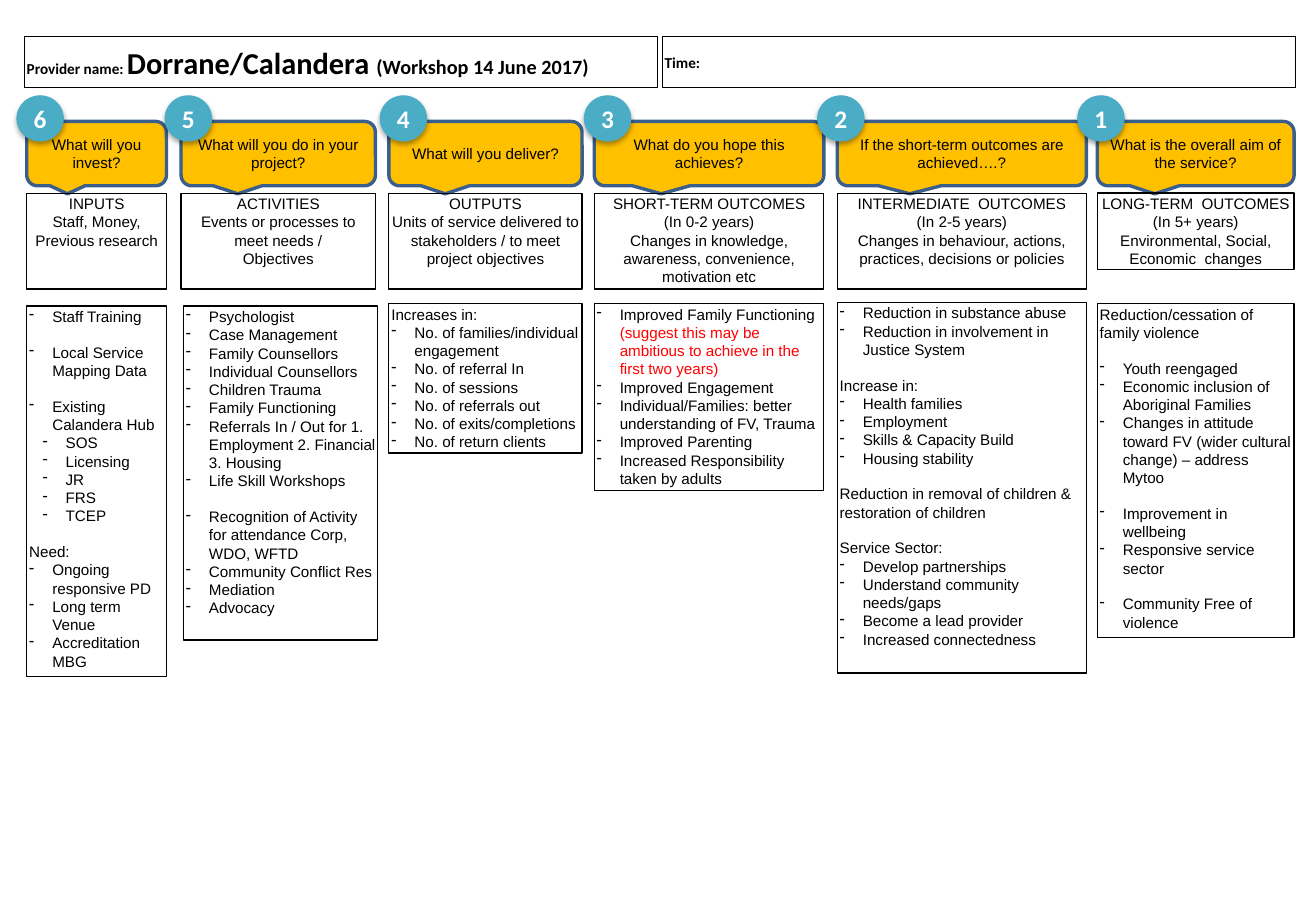
from dataclasses import dataclass

from lxml.etree import SubElement
from pptx import Presentation
from pptx.dml.color import RGBColor
from pptx.enum.shapes import MSO_SHAPE as Shape
from pptx.enum.text import MSO_ANCHOR as Anchor, PP_ALIGN as Align
from pptx.oxml.ns import qn
from pptx.util import Inches, Pt


@dataclass(frozen=True)
class Theme:
    ink: str = "000000"
    white: str = "FFFFFF"
    note: str = "FF0000"
    callout: str = "FFC000"
    callout_edge: str = "3A5F8C"
    badge: str = "4BACC6"
    body_font: str = "Arial"
    heading_font: str = "Calibri"
    body_size: float = 9
    badge_size: float = 15
    provider_size: float = 18
    workshop_size: float = 12
    line_height: float = 10.35


THEME = Theme()


@dataclass(frozen=True)
class Item:
    text: str
    indent: float = 0
    gap: bool = False
    note: str = ""


@dataclass(frozen=True)
class Column:
    number: str
    left: float
    width: float
    badge_shift: float
    question: str
    summary: tuple
    detail_box: tuple  # left shift, top, height
    details: tuple
    summary_height: float = 0.79


def bullet(text, gap=False, note=""):
    return Item(text, 0.19, gap, note)


def bullets(*texts):
    return tuple(bullet(text) for text in texts)


COLUMNS = (
    Column("6", 0.22, 1.15, -0.08, "What will you invest?",
           ("INPUTS", "Staff, Money, Previous research"), (0, 2.52, 3.05),
           (bullet("Staff Training"), bullet("Local Service Mapping Data", gap=True),
            bullet("Existing Calandera Hub", gap=True),
            *(Item(text, 0.3) for text in ("SOS", "Licensing", "JR", "FRS", "TCEP")),
            Item("Need:", gap=True),
            *bullets("Ongoing responsive PD", "Long term Venue", "Accreditation MBG"))),
    Column("5", 1.49, 1.6, -0.13, "What will you do in your project?",
           ("ACTIVITIES", "Events or processes to meet needs /", "Objectives"),
           (0.02, 2.52, 2.75),
           (*bullets("Psychologist", "Case Management", "Family Counsellors",
                     "Individual Counsellors", "Children Trauma", "Family Functioning",
                     "Referrals In / Out for 1. Employment 2. Financial 3. Housing",
                     "Life Skill Workshops"),
            bullet("Recognition of Activity for attendance Corp, WDO, WFTD", gap=True),
            *bullets("Community Conflict Res", "Mediation", "Advocacy"))),
    Column("4", 3.2, 1.59, -0.07, "What will you deliver?",
           ("OUTPUTS",
            "Units of service delivered to stakeholders / to meet project objectives"),
           (0, 2.5, 1.23),
           (Item("Increases in:"),
            *bullets("No. of families/individual engagement", "No. of referral In",
                     "No. of sessions", "No. of referrals out",
                     "No. of exits/completions", "No. of return clients"))),
    Column("3", 4.89, 1.89, -0.08, "What do you hope this achieves?",
           ("SHORT-TERM OUTCOMES", "(In 0-2 years)",
            "Changes in knowledge, awareness, convenience, motivation etc"),
           (0, 2.5, 1.54),
           (bullet("Improved Family Functioning ",
                   note="(suggest this may be ambitious to achieve in the first two years)"),
            *bullets("Improved Engagement",
                     "Individual/Families: better understanding of FV, Trauma",
                     "Improved Parenting", "Increased Responsibility taken by adults"))),
    Column("2", 6.89, 2.05, -0.16, "If the short-term outcomes are achieved….?",
           ("INTERMEDIATE  OUTCOMES", "(In 2-5 years)",
            "Changes in behaviour, actions, practices, decisions or policies"),
           (0, 2.49, 3.05),
           (*bullets("Reduction in substance abuse",
                     "Reduction in involvement in Justice System"),
            Item("Increase in:", gap=True),
            *bullets("Health families", "Employment", "Skills & Capacity Build",
                     "Housing stability"),
            Item("Reduction in removal of children & restoration of children", gap=True),
            Item("Service Sector:", gap=True),
            *bullets("Develop partnerships", "Understand community needs/gaps",
                     "Become a lead provider", "Increased connectedness"))),
    Column("1", 9.03, 1.62, -0.16, "What is the overall aim of the service?",
           ("LONG-TERM  OUTCOMES", "(In 5+ years)",
            "Environmental, Social, Economic  changes"),
           (0, 2.5, 2.75),
           (Item("Reduction/cessation of family violence"),
            bullet("Youth reengaged", gap=True),
            *bullets("Economic inclusion of Aboriginal Families",
                     "Changes in attitude toward FV (wider cultural change) – address Mytoo"),
            bullet("Improvement in wellbeing", gap=True),
            bullet("Responsive service sector"),
            bullet("Community Free of violence", gap=True)),
           summary_height=0.63),
)


def add_panel(slide, kind, box, fill=None, edge=THEME.ink, edge_width=0.75,
              anchor=Anchor.MIDDLE):
    shape = slide.shapes.add_shape(kind, *(Inches(length) for length in box))
    shape.shadow.inherit = False
    if fill:
        shape.fill.solid()
        shape.fill.fore_color.rgb = RGBColor.from_string(fill)
    else:
        shape.fill.background()
    shape.line.color.rgb = RGBColor.from_string(edge)
    shape.line.width = Pt(edge_width)
    frame = shape.text_frame
    frame.word_wrap = True
    frame.vertical_anchor = anchor
    frame.margin_left = frame.margin_right = Inches(0.02)
    frame.margin_top = frame.margin_bottom = Inches(0.01)
    return shape


def style(paragraph, align=Align.LEFT, font=THEME.body_font, size=THEME.body_size,
          color=THEME.ink, bold=False):
    paragraph.alignment = align
    paragraph.font.name = font
    paragraph.font.size = Pt(size)
    paragraph.font.bold = bold
    paragraph.font.color.rgb = RGBColor.from_string(color)


def write_items(shape, items, align=Align.LEFT):
    frame = shape.text_frame
    for index, item in enumerate(items):
        paragraph = frame.add_paragraph() if index else frame.paragraphs[0]
        paragraph.add_run().text = item.text
        if item.indent:
            properties = paragraph._p.get_or_add_pPr()
            properties.set("marL", str(Inches(item.indent)))
            properties.set("indent", str(Inches(-0.19)))
            SubElement(properties, qn("a:buChar"), char="-")
        if item.gap:
            paragraph.space_before = Pt(THEME.line_height)
        style(paragraph, align)
        if item.note:
            run = paragraph.add_run()
            run.text = item.note
            run.font.color.rgb = RGBColor.from_string(THEME.note)


def add_badge(slide, number, left, top):
    badge = add_panel(slide, Shape.OVAL, (left, top, 0.38, 0.37), THEME.badge, THEME.badge)
    effects = badge._element.spPr.find(qn("a:effectLst"))
    shadow = SubElement(effects, qn("a:outerShdw"), blurRad=str(Pt(3.1)),
                        dist=str(Pt(1.8)), dir="5400000", rotWithShape="0")
    color = SubElement(shadow, qn("a:srgbClr"), val=THEME.ink)
    SubElement(color, qn("a:alpha"), val="35000")
    paragraph = badge.text_frame.paragraphs[0]
    paragraph.add_run().text = number
    style(paragraph, Align.CENTER, THEME.heading_font, THEME.badge_size, THEME.white, True)


def add_header(slide, box, segments):
    """Draw a heading box from (text, size) segments."""
    paragraph = add_panel(slide, Shape.RECTANGLE, box).text_frame.paragraphs[0]
    style(paragraph, font=THEME.heading_font, bold=True)
    for text, size in segments:
        run = paragraph.add_run()
        run.text = text
        run.font.size = Pt(size)


def add_column(slide, column, top):
    left, width = column.left, column.width
    callout = add_panel(slide, Shape.ROUNDED_RECTANGULAR_CALLOUT, (left, top, width, 0.53),
                        THEME.callout, THEME.callout_edge, 2)
    write_items(callout, [Item(column.question)], Align.CENTER)
    summary = add_panel(slide, Shape.RECTANGLE,
                        (left, top + 0.59, width, column.summary_height), anchor=Anchor.TOP)
    write_items(summary, [Item(text) for text in column.summary], Align.CENTER)
    shift, detail_top, height = column.detail_box
    details = add_panel(slide, Shape.RECTANGLE, (left + shift, detail_top, width, height),
                        anchor=Anchor.TOP)
    write_items(details, column.details)
    add_badge(slide, column.number, left + column.badge_shift, top - 0.21)


def main():
    presentation = Presentation()
    presentation.slide_width, presentation.slide_height = Inches(10.83), Inches(7.5)
    slide = presentation.slides.add_slide(presentation.slide_layouts[6])
    add_header(slide, (0.2, 0.3, 5.21, 0.42),
               (("Provider name: ", THEME.body_size),
                ("Dorrane/Calandera ", THEME.provider_size),
                ("(Workshop 14 June 2017)", THEME.workshop_size)))
    add_header(slide, (5.45, 0.3, 5.21, 0.42), (("Time:", THEME.body_size),))
    for column in COLUMNS:
        add_column(slide, column, top=1)
    presentation.save("out.pptx")


if __name__ == "__main__":
    main()
